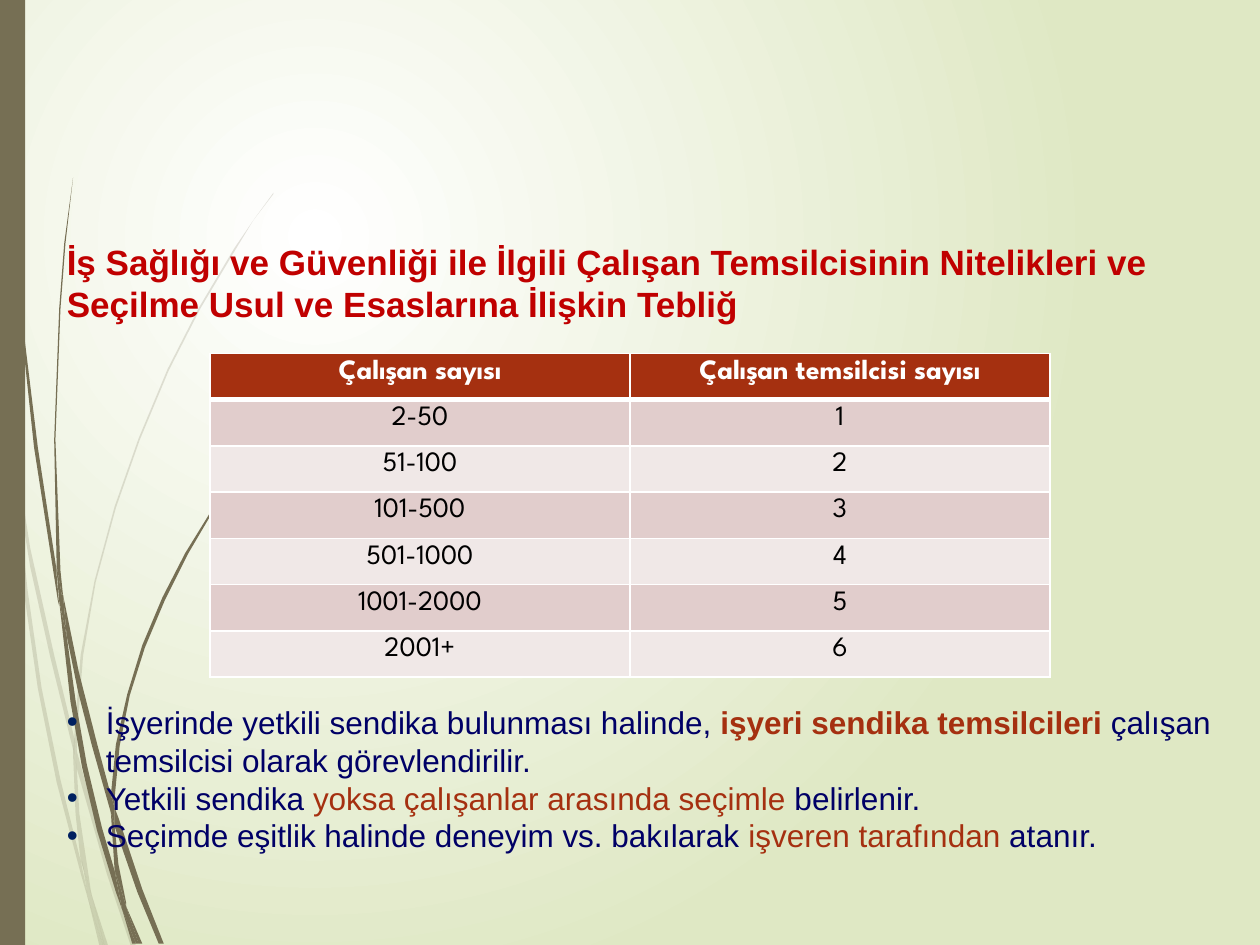
from lxml.etree import SubElement as Sub
from pptx import Presentation
from pptx.dml.color import RGBColor as RGB
from pptx.enum.shapes import MSO_SHAPE as Kind
from pptx.enum.text import PP_ALIGN as Align
from pptx.oxml.ns import qn
from pptx.util import Emu, Inches, Pt

WHITE = RGB(0xFF, 0xFF, 0xFF)
BLACK = RGB(0, 0, 0)
LIME = RGB(0xDF, 0xE8, 0xC4)
OLIVE = RGB(0x76, 0x6F, 0x54)
RED = RGB(0xC0, 0, 0)
RUST = RGB(0xA5, 0x30, 0x10)
NAVY = RGB(0, 0, 0x66)
DOT = RGB(0, 0x20, 0x60)
ROSE = RGB(0xE1, 0xCD, 0xCC)
PALE = RGB(0xF0, 0xE8, 0xE7)

COLS, ROWS = 100, 75  # grid of the slide

# Grass leaves: outline corners in grid units
FAINT = [
    [(0.8, 35), (0.6, 32.2), (0, 28.2), (0, 29.9), (0.7, 34.4)],
    [(4, 52.2), (5.9, 59.9), (5.9, 58.6), (4.3, 52), (2.4, 43.5), (1, 34.5),
     (1.2, 37.6), (2.4, 45)],
    [(6.4, 60.7), (6.1, 59.6), (6.1, 61), (8.5, 69.4), (10.4, 75.1),
     (10.8, 75.1), (8.8, 69.2)],
    [(8.3, 75.1), (8.6, 75.1), (7.3, 71.1)],
    [(6.4, 68.3), (4.8, 61.9), (3.3, 54.6), (2.2, 46.9), (1.2, 37.6),
     (0.8, 35), (1.9, 47), (3, 54.6), (4.5, 62.1), (6.4, 69.3), (7, 71.4),
     (6.9, 70.7)],
    [(5.8, 59.9), (6, 64.6), (6.4, 68.3), (6.7, 69.2), (7.3, 71.1),
     (7.2, 70.6), (6.3, 64.6), (6.1, 61), (6.1, 60.8)],
    [(6.1, 58.4), (6.6, 52), (7.6, 46.2), (9.2, 40.3), (11.1, 34.9),
     (13.4, 29.4), (15.9, 24.5), (18.7, 19.8), (20.1, 17.5), (21.7, 15.4),
     (21.7, 15.3), (20.1, 17.5), (18.6, 19.7), (15.8, 24.4), (13.3, 29.3),
     (11, 34.8), (9.1, 40.2), (7.5, 46.1), (6.4, 52), (5.9, 58.4),
     (5.9, 58.6), (6.1, 59.6)],
    [(7, 71.4), (7.9, 75.1), (8.2, 75.1)],
    [(6.1, 60.8), (6.1, 61), (6.1, 59.6), (5.9, 58.6), (5.8, 59.9)],
    [(6.7, 69.2), (6.5, 68.3), (6.9, 70.7), (7, 71.4), (8.2, 75.1),
     (8.3, 75.1), (7.3, 71.1)],
]
DARK = [
    [(0.5, 11), (1.4, 23.3), (2.7, 35.5), (4.6, 47.7), (4.7, 48.1),
     (4.5, 45.7), (4.5, 45.3), (3, 35.5), (1.5, 23.2), (0.6, 10.9),
     (0.4, 4.8), (0.3, 0), (0.2, 0), (0.3, 4.8)],
    [(7.3, 59.2), (8.8, 64.5), (8.8, 63.1), (7.7, 59), (6.25, 53.3),
     (5, 47.2), (5.3, 50.5), (6.2, 54.9)],
    [(9.4, 64.9), (9.1, 64.1), (9.1, 65.6), (10.9, 70.8), (12.6, 74.9),
     (13, 74.9), (11.3, 70.6)],
    [(9.1, 69.1), (8.1, 65.7), (6.9, 60.7), (6, 55.6), (5.3, 50.5),
     (4.7, 47.7), (5.6, 55.7), (6.5, 60.8), (7.7, 65.9), (9.2, 70.8),
     (9.7, 72.2), (9.6, 71.7)],
    [(5, 47.2), (4.8, 45.3), (4.4, 34.9), (4.8, 24.5), (5.2, 19.3),
     (5.8, 14.1), (5.1, 19.3), (4.7, 24.5), (4.3, 34.9), (4.5, 44.9),
     (4.9, 47.2)],
    [(11, 74.9), (11.3, 74.9), (10, 71.9)],
    [(4.7, 47.7), (5.3, 50.5), (5, 47.2), (4.9, 47.2), (4.5, 44.9),
     (4.5, 45.3)],
    [(9.1, 63.3), (9.5, 59.2), (10.3, 55.2), (11.5, 51.4), (13.1, 47.6),
     (14.9, 44), (16.9, 40.6), (19.1, 37.4), (20.3, 35.9), (21.6, 34.4),
     (21.5, 34.4), (20.3, 35.8), (19.1, 37.3), (16.8, 40.5), (14.7, 43.9),
     (12.9, 47.4), (11.3, 51.2), (10.1, 55.1), (9.2, 59.1), (8.8, 63.1),
     (9.1, 64.1)],
    [(9.7, 72.2), (10.5, 74.9), (10.8, 74.9)],
    [(8.8, 64.5), (9.1, 69.1), (9.6, 70.6), (10, 71.9), (10, 71.6),
     (9.4, 68.6), (9.1, 65.6), (9, 65.1)],
    [(8.8, 64.5), (9, 65.1), (9.1, 65.6), (9.1, 64.1), (8.8, 63.1)],
    [(9.6, 70.6), (9.1, 69.1), (9.6, 71.7), (9.7, 72.2), (10.8, 74.9),
     (11, 74.9), (10, 71.9)],
]

HEAD = ("İş Sağlığı ve Güvenliği ile İlgili Çalışan Temsilcisinin "
        "Nitelikleri ve Seçilme Usul ve Esaslarına İlişkin Tebliğ")
DATA = [
    ("Çalışan sayısı", "Çalışan temsilcisi sayısı"),
    ("2-50", "1"), ("51-100", "2"), ("101-500", "3"),
    ("501-1000", "4"), ("1001-2000", "5"), ("2001+", "6"),
]
NOTES = [
    [("İşyerinde yetkili sendika bulunması halinde, ", NAVY, False),
     ("işyeri sendika temsilcileri ", RUST, True),
     ("çalışan temsilcisi olarak görevlendirilir.", NAVY, False)],
    [("Yetkili sendika ", NAVY, False),
     ("yoksa çalışanlar arasında seçimle ", RUST, False),
     ("belirlenir.", NAVY, False)],
    [("Seçimde eşitlik halinde deneyim vs. bakılarak ", NAVY, False),
     ("işveren tarafından", RUST, False), (" atanır.", NAVY, False)],
]


class Deck:
    text, face = "Arial", "League Spartan"

    def __init__(self):
        self.prs = Presentation()
        self.prs.slide_width, self.prs.slide_height = Inches(10), Inches(7.5)
        self.slide = self.prs.slides.add_slide(self.prs.slide_layouts[6])
        self.shapes = self.slide.shapes

    def x(self, col):
        return Emu(round(self.prs.slide_width * col / COLS))

    def y(self, row):
        return Emu(round(self.prs.slide_height * row / ROWS))

    def box(self, left, top, wide, high):
        return self.x(left), self.y(top), self.x(wide), self.y(high)

    def glow(self, inner, outer):
        fill = self.slide.background.fill
        fill.gradient()
        for stop, tint in zip(fill.gradient_stops, (inner, outer)):
            stop.color.rgb = tint
        grad = self.slide.element.find(".//" + qn("a:gradFill"))
        grad.remove(grad.find(qn("a:lin")))
        ring = Sub(grad, qn("a:path"), path="circle")
        Sub(ring, qn("a:fillToRect"), l="50000", t="50000", r="100000", b="100000")

    def paint(self, shape, tint, alpha=100):
        shape.shadow.inherit = False
        shape.fill.solid()
        shape.fill.fore_color.rgb = tint
        shape.line.fill.background()
        if alpha < 100:
            clr = shape.fill._xPr.find(".//" + qn("a:srgbClr"))
            Sub(clr, qn("a:alpha"), val=str(alpha * 1000))

    def bar(self, area, tint):
        self.paint(self.shapes.add_shape(Kind.RECTANGLE, *self.box(*area)), tint)

    def leaf(self, edge, tint, alpha=100):
        first, *rest = [(self.x(x), self.y(y)) for x, y in edge]
        pen = self.shapes.build_freeform(*first)
        pen.add_line_segments(rest)
        self.paint(pen.convert_to_shape(), tint, alpha)

    def style(self, run, face, size, tint, bold=False):
        font = run.font
        font.name, font.size, font.bold = face, Pt(size), bold
        font.color.rgb = tint

    def words(self, area, paras, size, dots=False):
        frame = self.shapes.add_textbox(*self.box(*area)).text_frame
        frame.word_wrap = True
        for n, parts in enumerate(paras):
            para = frame.add_paragraph() if n else frame.paragraphs[0]
            if dots:
                self.dot(para)
            for text, tint, bold in parts:
                run = para.add_run()
                run.text = text
                self.style(run, self.text, size, tint, bold)

    def dot(self, para):
        prop = para._p.get_or_add_pPr()
        prop.set("marL", str(self.x(3.1)))
        prop.set("indent", str(-self.x(3.1)))
        Sub(Sub(prop, qn("a:buClr")), qn("a:srgbClr"), val=str(DOT))
        Sub(prop, qn("a:buFont"), typeface=self.text)
        Sub(prop, qn("a:buChar"), char="•")

    def table(self, area, data):
        grid = self.shapes.add_table(len(data), len(data[0]), *self.box(*area)).table
        for r, row in enumerate(data):
            for c, text in enumerate(row):
                head, cell = r == 0, grid.cell(r, c)
                # Only the seam under the header is thick
                self.rule(cell, 3 if r == 1 else 1, 3 if head else 1)
                cell.fill.solid()
                cell.fill.fore_color.rgb = RUST if head else (PALE, ROSE)[r % 2]
                cell.text_frame.text = text
                para = cell.text_frame.paragraphs[0]
                para.alignment = Align.CENTER
                self.style(para.runs[0], self.face, 16, WHITE if head else BLACK, head)

    def rule(self, cell, top, base):
        prop = cell._tc.get_or_add_tcPr()
        for side, wide in zip("LRTB", (1, 1, top, base)):
            line = Sub(prop, qn("a:ln" + side), w=str(Pt(wide)))
            Sub(Sub(line, qn("a:solidFill")), qn("a:srgbClr"), val=str(WHITE))


def main():
    deck = Deck()
    # Backdrop: glow, grass and side bar
    deck.glow(WHITE, LIME)
    for leaves, alpha in ((FAINT, 20), (DARK, 100)):
        for edge in leaves:
            deck.leaf(edge, OLIVE, alpha)
    deck.bar((0, 0, 2, ROWS), OLIVE)
    # Heading, table and notes
    deck.words((4.32, 18.6, 93.7, 7.6), [[(HEAD, RED, True)]], 20)
    deck.table((COLS / 6, 28.05, COLS * 2 / 3, 25.7), DATA)
    deck.words((4.32, 55.3, 93.7, 13), NOTES, 18, dots=True)
    deck.prs.save("out.pptx")


if __name__ == "__main__":
    main()
